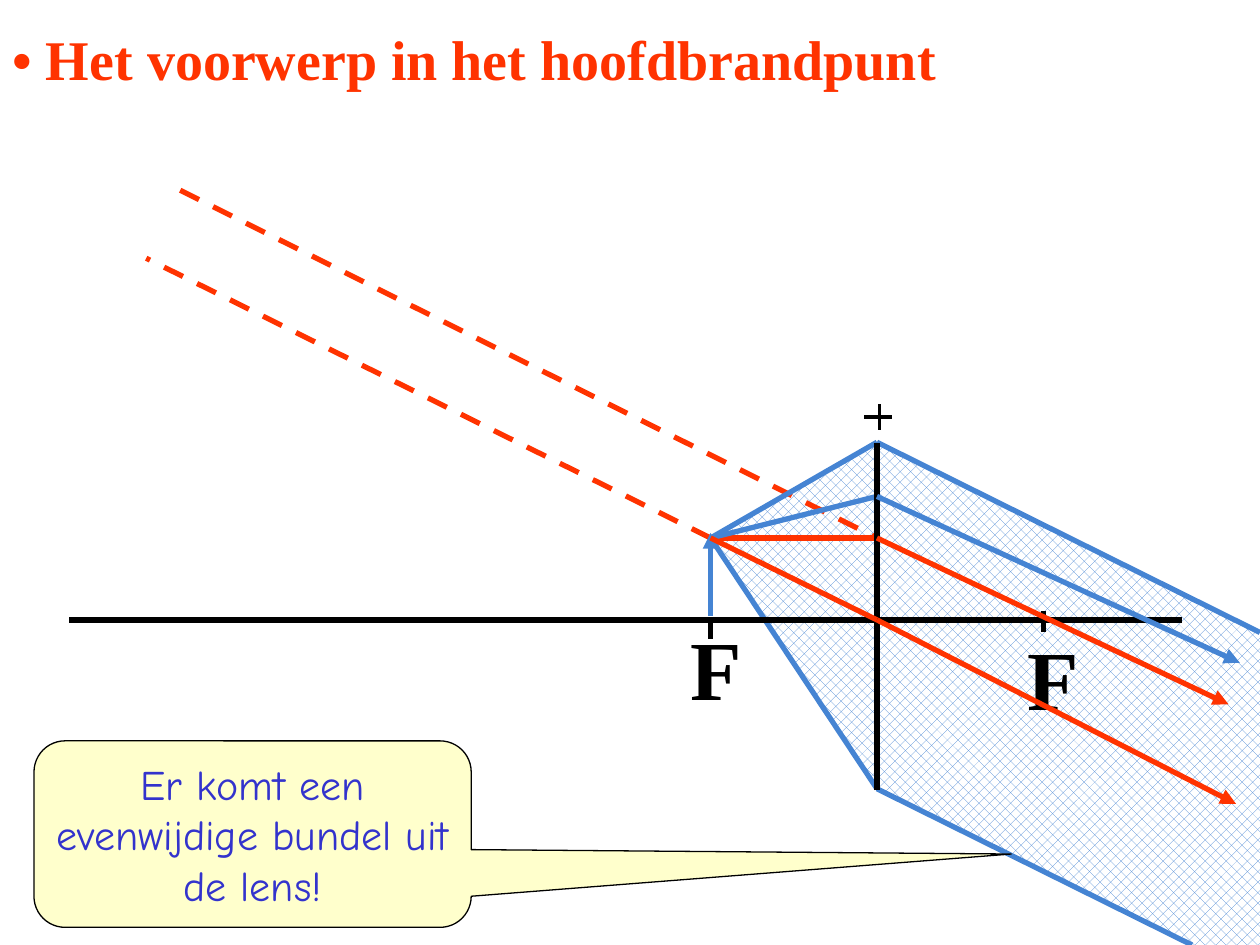
from lxml import etree
from pptx import Presentation
from pptx.dml.color import RGBColor
from pptx.enum.dml import MSO_LINE, MSO_PATTERN
from pptx.enum.shapes import MSO_CONNECTOR, MSO_SHAPE
from pptx.enum.text import MSO_ANCHOR, PP_ALIGN
from pptx.oxml.ns import qn
from pptx.util import Inches, Pt

STRAIGHT = MSO_CONNECTOR.STRAIGHT
CALLOUT = MSO_SHAPE.ROUNDED_RECTANGULAR_CALLOUT
DASH = MSO_LINE.DASH
HATCH = MSO_PATTERN.from_xml("pct40")
MIDDLE = MSO_ANCHOR.MIDDLE
CENTER = PP_ALIGN.CENTER

RED, BLUE, BLACK, WHITE = "FF3300", "4584D3", "000000", "FFFFFF"
SERIF = "Times New Roman"
SLIDE_W, SLIDE_H = 10, 7.5


def rgb(hex_color):
    return RGBColor.from_string(hex_color)


def add_line(slide, origin, start, end, color, width=3, dashed=False, arrow=False):
    """Draw a straight line between two points given relative to origin."""
    x, y = origin
    line = slide.shapes.add_connector(
        STRAIGHT, Inches(x + start[0]), Inches(y + start[1]),
        Inches(x + end[0]), Inches(y + end[1]))
    line.line.color.rgb = rgb(color)
    line.line.width = Pt(width)
    if dashed:
        line.line.dash_style = DASH
    if arrow:
        outline = line._element.spPr.find(qn("a:ln"))
        etree.SubElement(outline, qn("a:tailEnd"), type="triangle")
    etree.SubElement(line._element.spPr, qn("a:effectLst"))


def add_beam(slide, origin, points):
    """Draw a hatched area whose corners are given relative to origin."""
    corners = [(Inches(origin[0] + x), Inches(origin[1] + y)) for x, y in points]
    builder = slide.shapes.build_freeform(*corners[0])
    builder.add_line_segments(corners[1:], close=True)
    beam = builder.convert_to_shape()
    beam.shadow.inherit = False
    beam.fill.patterned()
    beam.fill.pattern = HATCH
    beam.fill.fore_color.rgb = rgb(BLUE)
    beam.fill.back_color.rgb = rgb(WHITE)
    beam.line.fill.background()


def write(shape, text, font_name, size, color, bold=False):
    frame = shape.text_frame
    frame.word_wrap = True
    frame.vertical_anchor = MIDDLE
    paragraph = frame.paragraphs[0]
    paragraph.text = text
    font = paragraph.font
    font.name, font.size, font.bold = font_name, Pt(size), bold
    font.color.rgb = rgb(color)
    return paragraph


def add_label(slide, box, text, size, color):
    label = slide.shapes.add_textbox(*map(Inches, box))
    write(label, text, SERIF, size, color, bold=True)


def add_lens_diagram(slide, center):
    """Draw lens, axis and rays; every point is relative to the lens centre."""
    focus = 1.32
    tip = (-focus, -0.65)
    top, bottom = (0, -1.41), (0, 1.34)
    upper_hit, parallel_hit = (0, -0.98), (0, -0.65)
    right, floor = SLIDE_W - center[0], SLIDE_H - center[1]
    upper_edge, lower_edge = (right, 0.1), (2.5, floor)

    add_beam(slide, center, [top, bottom, lower_edge, (right, floor), upper_edge])
    add_beam(slide, center, [bottom, top, tip])

    add_line(slide, center, tip, parallel_hit, RED)
    add_line(slide, center, (-5.53, -3.41), parallel_hit, RED, dashed=True)
    add_line(slide, center, tip, (-5.8, -2.87), RED, dashed=True)

    for start, end in ((tip, top), (top, upper_edge), (bottom, lower_edge),
                       (tip, bottom), (tip, upper_hit)):
        add_line(slide, center, start, end, BLUE)

    for x, y in ((-focus, -0.02), (focus, -0.07)):
        add_line(slide, center, (x, y), (x, y + 0.17), BLACK)
    add_line(slide, center, (-0.1, -1.61), (0.12, -1.61), BLACK, 2.25)
    add_line(slide, center, (0.02, -1.71), (0.02, -1.51), BLACK, 2.25)
    add_line(slide, center, (-focus, -0.03), (-focus, -0.69), BLUE, arrow=True)
    for x, y in ((-1.58, -0.21), (1.1, -0.13)):
        add_label(slide, (center[0] + x, center[1] + y, 0.58, 1.17), "F", 48, BLACK)
    add_line(slide, center, (-6.41, 0), (2.42, 0), BLACK)
    add_line(slide, center, (0, -1.4), (0, 1.35), BLACK)

    add_line(slide, center, tip, (0, 0), RED)
    for start, end, color in ((parallel_hit, (2.79, 0.67), RED),
                              ((0, 0), (2.85, 1.46), RED),
                              (upper_hit, (2.88, 0.34), BLUE)):
        add_line(slide, center, start, end, color, arrow=True)


def add_callout(slide, box, text):
    callout = slide.shapes.add_shape(CALLOUT, *map(Inches, box))
    callout.shadow.inherit = False
    for index, value in enumerate((1.735, 0.107, 0.167)):
        callout.adjustments[index] = value
    callout.fill.solid()
    callout.fill.fore_color.rgb = rgb("FFFFCC")
    callout.line.color.rgb = rgb(BLACK)
    callout.line.width = Pt(0.75)
    callout.text_frame.margin_left = callout.text_frame.margin_right = Inches(0.05)
    write(callout, text, "Comic Neue", 24, "3333CC").alignment = CENTER


def main():
    deck = Presentation()
    deck.slide_width, deck.slide_height = Inches(SLIDE_W), Inches(SLIDE_H)
    slide = deck.slides.add_slide(deck.slide_layouts[6])
    add_label(slide, (0, 0, SLIDE_W, 0.92), "• Het voorwerp in het hoofdbrandpunt", 32, RED)
    add_lens_diagram(slide, (6.96, 4.92))
    add_callout(slide, (0.27, 5.88, 3.47, 1.48),
                "Er komt een evenwijdige bundel uit de lens!")
    deck.save("out.pptx")


if __name__ == "__main__":
    main()
